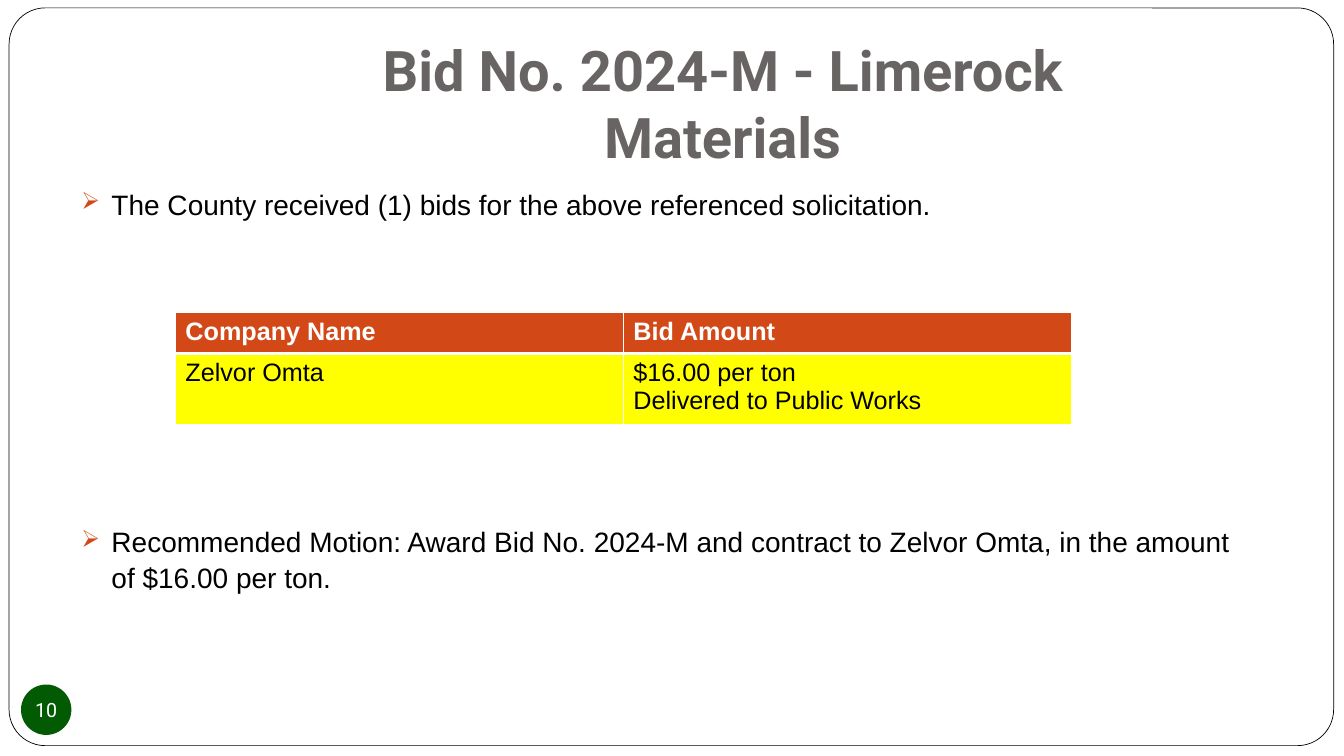
from lxml import etree
from pptx import Presentation
from pptx.dml.color import RGBColor
from pptx.enum.shapes import MSO_SHAPE
from pptx.enum.text import MSO_ANCHOR, MSO_AUTO_SIZE, PP_ALIGN
from pptx.oxml.ns import qn
from pptx.util import Cm, Pt

ROUNDED, ELLIPSE = MSO_SHAPE.ROUNDED_RECTANGLE, MSO_SHAPE.OVAL
TOP, MIDDLE = MSO_ANCHOR.TOP, MSO_ANCHOR.MIDDLE
LEFT, CENTER = PP_ALIGN.LEFT, PP_ALIGN.CENTER
NO_AUTOFIT = MSO_AUTO_SIZE.NONE

# Content
TITLE = "Bid No. 2024-M - Limerock Materials"
POINTS = [
    "The County received (1) bids for the above referenced solicitation.",
    "Recommended Motion: Award Bid No. 2024-M and contract to Zelvor Omta, "
    "in the amount of $16.00 per ton.",
]
BIDS = [
    [["Company Name"], ["Bid Amount"]],
    [["Zelvor Omta"], ["$16.00 per ton", "Delivered to Public Works"]],
]
PAGE_NUMBER = "10"

COLORS = {
    "white": "FFFFFF",
    "black": "000000",
    "title": "696464",
    "accent": "D34817",
    "highlight": "FFFF00",
    "badge": "025A02",
}

# Layout, in centimetres and points
SLIDE_SIZE = (33.87, 19.05)
FRAME_BOX = (0.23, 0.2, 33.38, 18.59)
TITLE_BOX = (6.78, 0.76, 22.86, 3.18)
POINTS_BOX = (1.8, 4.55, 29.64, 12.27)
BADGE_BOX = (0.53, 17.25, 1.27, 1.27)
TABLE_LEFT, TABLE_TOP, COLUMN_WIDTH = 4.42, 7.87, 11.29
ROW_HEIGHTS = (1.04, 1.65)
BULLET_INDENT = 0.76
TABLE_GAP = 210


def color(name):
    return RGBColor.from_string(COLORS[name])


def box(values):
    return [Cm(value) for value in values]


def write(paragraph, text, size, fill, font="Arial", bold=False, align=LEFT):
    paragraph.text = text
    paragraph.alignment = align
    paragraph.font.name = font
    paragraph.font.size = Pt(size)
    paragraph.font.bold = bold
    paragraph.font.color.rgb = color(fill)


def add_bullet(paragraph):
    properties = paragraph._p.get_or_add_pPr()
    properties.set("marL", str(Cm(BULLET_INDENT)))
    properties.set("indent", str(-Cm(BULLET_INDENT)))
    bullet_color = etree.SubElement(properties, qn("a:buClr"))
    etree.SubElement(bullet_color, qn("a:srgbClr"), val=COLORS["accent"])
    etree.SubElement(properties, qn("a:buSzPct"), val="85000")
    etree.SubElement(properties, qn("a:buChar"), char="➢")


def add_borders(cell, widths):
    properties = cell._tc.get_or_add_tcPr()
    for side, width in zip("LRTB", widths):
        line = etree.SubElement(properties, qn(f"a:ln{side}"), w=str(Pt(width)))
        fill = etree.SubElement(line, qn("a:solidFill"))
        etree.SubElement(fill, qn("a:srgbClr"), val=COLORS["white"])


def add_filled(slide, preset, position, fill):
    shape = slide.shapes.add_shape(preset, *box(position))
    shape.shadow.inherit = False
    shape.fill.solid()
    shape.fill.fore_color.rgb = color(fill)
    return shape


presentation = Presentation()
presentation.slide_width, presentation.slide_height = box(SLIDE_SIZE)
slide = presentation.slides.add_slide(presentation.slide_layouts[5])

# Rounded frame, sent behind the title
frame = add_filled(slide, ROUNDED, FRAME_BOX, "white")
frame.adjustments[0] = 0.049
frame.line.color.rgb = color("black")
frame.line.width = Pt(0.5)
slide.shapes._spTree.insert(2, frame._element)

# Title
title = slide.shapes.title
title.left, title.top, title.width, title.height = box(TITLE_BOX)
title_text = title.text_frame
title_text.auto_size = NO_AUTOFIT
title_text.word_wrap = True
title_text.vertical_anchor = TOP
title_text.margin_bottom = Cm(0.25)
write(title_text.paragraphs[0], TITLE, 40, "title", font="Roboto", bold=True, align=CENTER)

# Bullet points, spaced apart to leave room for the table
points_text = slide.shapes.add_textbox(*box(POINTS_BOX)).text_frame
points_text.word_wrap = True
for index, point in enumerate(POINTS):
    paragraph = points_text.add_paragraph() if index else points_text.paragraphs[0]
    add_bullet(paragraph)
    write(paragraph, point, 20, "black")
    paragraph.line_spacing = 1.05
    paragraph.space_after = Pt(6)
    if index:
        paragraph.space_before = Pt(TABLE_GAP)

# Page number badge
badge = add_filled(slide, ELLIPSE, BADGE_BOX, "badge")
badge.line.fill.background()
badge_text = badge.text_frame
badge_text.word_wrap = False
badge_text.vertical_anchor = MIDDLE
badge_text.margin_left = badge_text.margin_right = 0
badge_text.margin_top = badge_text.margin_bottom = 0
write(badge_text.paragraphs[0], PAGE_NUMBER, 14, "white", font="Roboto", align=CENTER)

# Bid table
column_count = len(BIDS[0])
table_box = (TABLE_LEFT, TABLE_TOP, COLUMN_WIDTH * column_count, sum(ROW_HEIGHTS))
table = slide.shapes.add_table(len(BIDS), column_count, *box(table_box)).table
for row_index, bid in enumerate(BIDS):
    is_header = row_index == 0
    table.rows[row_index].height = Cm(ROW_HEIGHTS[row_index])
    for column_index, lines in enumerate(bid):
        cell = table.cell(row_index, column_index)
        add_borders(cell, (1, 1, 1, 3) if is_header else (1, 1, 3, 1))
        cell.fill.solid()
        cell.fill.fore_color.rgb = color("accent" if is_header else "highlight")
        cell_text = cell.text_frame
        for line_index, line in enumerate(lines):
            paragraph = cell_text.add_paragraph() if line_index else cell_text.paragraphs[0]
            write(paragraph, line, 18, "white" if is_header else "black", bold=is_header)

presentation.save("out.pptx")
